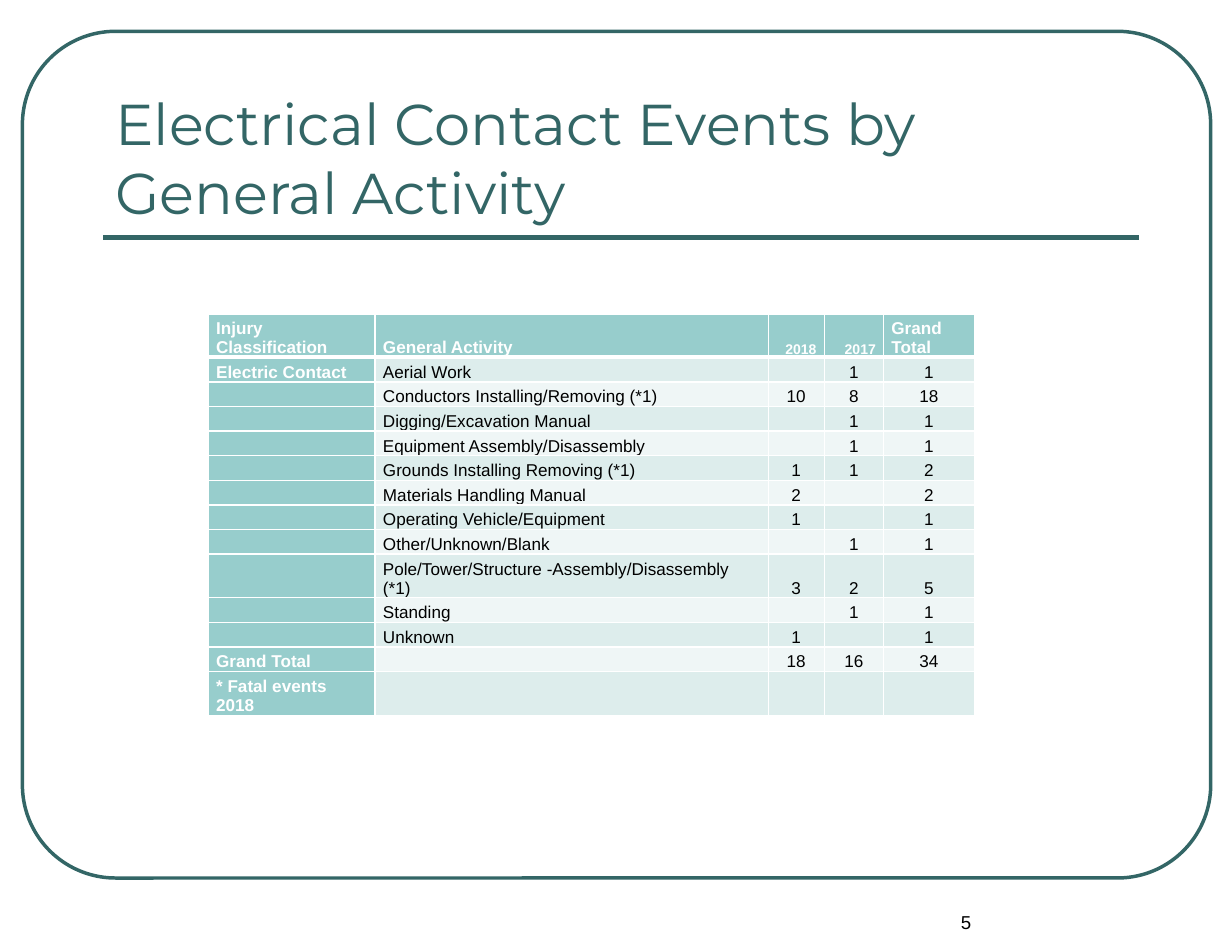
from dataclasses import dataclass

from lxml import etree
from pptx import Presentation
from pptx.dml.color import RGBColor
from pptx.enum.shapes import MSO_CONNECTOR, MSO_SHAPE
from pptx.enum.text import MSO_ANCHOR, MSO_AUTO_SIZE, PP_ALIGN
from pptx.oxml.ns import qn
from pptx.util import Inches, Pt

LEFT, CENTER, RIGHT = PP_ALIGN.LEFT, PP_ALIGN.CENTER, PP_ALIGN.RIGHT
BOTTOM = MSO_ANCHOR.BOTTOM


@dataclass(frozen=True)
class Theme:
    dark: str = "336666"
    accent: str = "97CDCC"
    bands: tuple = ("DDEDEC", "EFF6F6")
    white: str = "FFFFFF"
    black: str = "000000"
    title_font: str = "Montserrat"
    body_font: str = "Arial"
    title_size: int = 37
    number_size: int = 12
    table_size: int = 11
    year_size: int = 9


theme = Theme()


def add_text(paragraph, text, font, size, color, bold=False):
    run = paragraph.add_run()
    run.text = text
    run.font.name = font
    run.font.size = Pt(size)
    run.font.bold = bold
    run.font.color.rgb = RGBColor.from_string(color)


def add_borders(cell, bottom_width):
    """Draw white borders; call before the fill is set, as the schema orders them."""
    properties = cell._tc.get_or_add_tcPr()
    for side, width in (("L", 1), ("R", 1), ("T", 1), ("B", bottom_width)):
        line = etree.SubElement(properties, qn(f"a:ln{side}"), w=str(Pt(width)))
        fill = etree.SubElement(line, qn("a:solidFill"))
        etree.SubElement(fill, qn("a:srgbClr"), val=theme.white)


presentation = Presentation()
presentation.slide_width = Inches(11)
presentation.slide_height = Inches(8.5)
slide = presentation.slides.add_slide(presentation.slide_layouts[5])
shapes = slide.shapes

# Frame and title rule
frame = shapes.add_shape(
    MSO_SHAPE.ROUNDED_RECTANGLE, Inches(0.2), Inches(0.28), Inches(10.61), Inches(7.56))
frame.adjustments[0] = 0.11
frame.shadow.inherit = False
frame.fill.background()
frame.line.color.rgb = RGBColor.from_string(theme.dark)
frame.line.width = Pt(2.25)

rule = shapes.add_connector(
    MSO_CONNECTOR.STRAIGHT, Inches(0.92), Inches(2.12), Inches(10.17), Inches(2.12))
rule.line.color.rgb = RGBColor.from_string(theme.dark)
rule.line.width = Pt(3)
etree.SubElement(rule._element.spPr, qn("a:effectLst"))

# Title
title = shapes.title
title.left, title.top = Inches(0.92), Inches(0.66)
title.width, title.height = Inches(9.26), Inches(1.42)
title_frame = title.text_frame
title_frame.word_wrap = True
title_frame.auto_size = MSO_AUTO_SIZE.NONE
title_frame.vertical_anchor = BOTTOM
title_frame.margin_left = title_frame.margin_right = Inches(0.11)
title_frame.margin_top = title_frame.margin_bottom = Inches(0.06)
title_frame.paragraphs[0].alignment = LEFT
add_text(title_frame.paragraphs[0], "Electrical Contact Events by General Activity",
         theme.title_font, theme.title_size, theme.dark)

# Page number
number = shapes.add_textbox(Inches(8.35), Inches(8.08), Inches(0.55), Inches(0.3))
number.text_frame.word_wrap = True
number.text_frame.paragraphs[0].alignment = CENTER
add_text(number.text_frame.paragraphs[0], "5",
         theme.body_font, theme.number_size, theme.black)

# Table of events
rows = [
    ("Injury Classification", "General Activity", "2018", "2017", "Grand Total"),
    ("Electric Contact", "Aerial Work", "", "1", "1"),
    ("", "Conductors Installing/Removing (*1)", "10", "8", "18"),
    ("", "Digging/Excavation Manual", "", "1", "1"),
    ("", "Equipment Assembly/Disassembly", "", "1", "1"),
    ("", "Grounds Installing Removing (*1)", "1", "1", "2"),
    ("", "Materials Handling Manual", "2", "", "2"),
    ("", "Operating Vehicle/Equipment", "1", "", "1"),
    ("", "Other/Unknown/Blank", "", "1", "1"),
    ("", "Pole/Tower/Structure -Assembly/Disassembly (*1)", "3", "2", "5"),
    ("", "Standing", "", "1", "1"),
    ("", "Unknown", "1", "", "1"),
    ("Grand Total", "", "18", "16", "34"),
    ("* Fatal events 2018", "", "", "", ""),
]
column_widths = (1.49, 3.51, 0.5, 0.53, 0.81)
two_line_rows = {0: 0.38, 9: 0.39, 13: 0.39}
year_columns = (2, 3)

table = shapes.add_table(len(rows), len(column_widths), Inches(1.86), Inches(2.81),
                         Inches(6.85), Inches(3.56)).table
for column, width in zip(table.columns, column_widths):
    column.width = Inches(width)

for row_index, row in enumerate(rows):
    table.rows[row_index].height = Inches(two_line_rows.get(row_index, 0.22))
    is_header = row_index == 0
    for column_index, text in enumerate(row):
        is_heading = is_header or column_index == 0
        is_year = is_header and column_index in year_columns
        cell = table.cell(row_index, column_index)
        add_borders(cell, 3 if is_header else 1)
        cell.fill.solid()
        cell.fill.fore_color.rgb = RGBColor.from_string(
            theme.accent if is_heading else theme.bands[(row_index - 1) % 2])
        cell.vertical_anchor = BOTTOM
        cell.margin_left = cell.margin_right = Inches(0.07)
        cell.margin_top = cell.margin_bottom = 0

        paragraph = cell.text_frame.paragraphs[0]
        if is_year:
            paragraph.alignment = RIGHT
        elif column_index >= 2 and not is_header:
            paragraph.alignment = CENTER
        else:
            paragraph.alignment = LEFT
        if text:
            add_text(paragraph, text, theme.body_font,
                     theme.year_size if is_year else theme.table_size,
                     theme.white if is_heading else theme.black, is_heading)
        else:
            # Keeps an empty cell from stretching its row
            etree.SubElement(paragraph._p, qn("a:endParaRPr"),
                             sz=str(theme.table_size * 100))

presentation.save("out.pptx")
